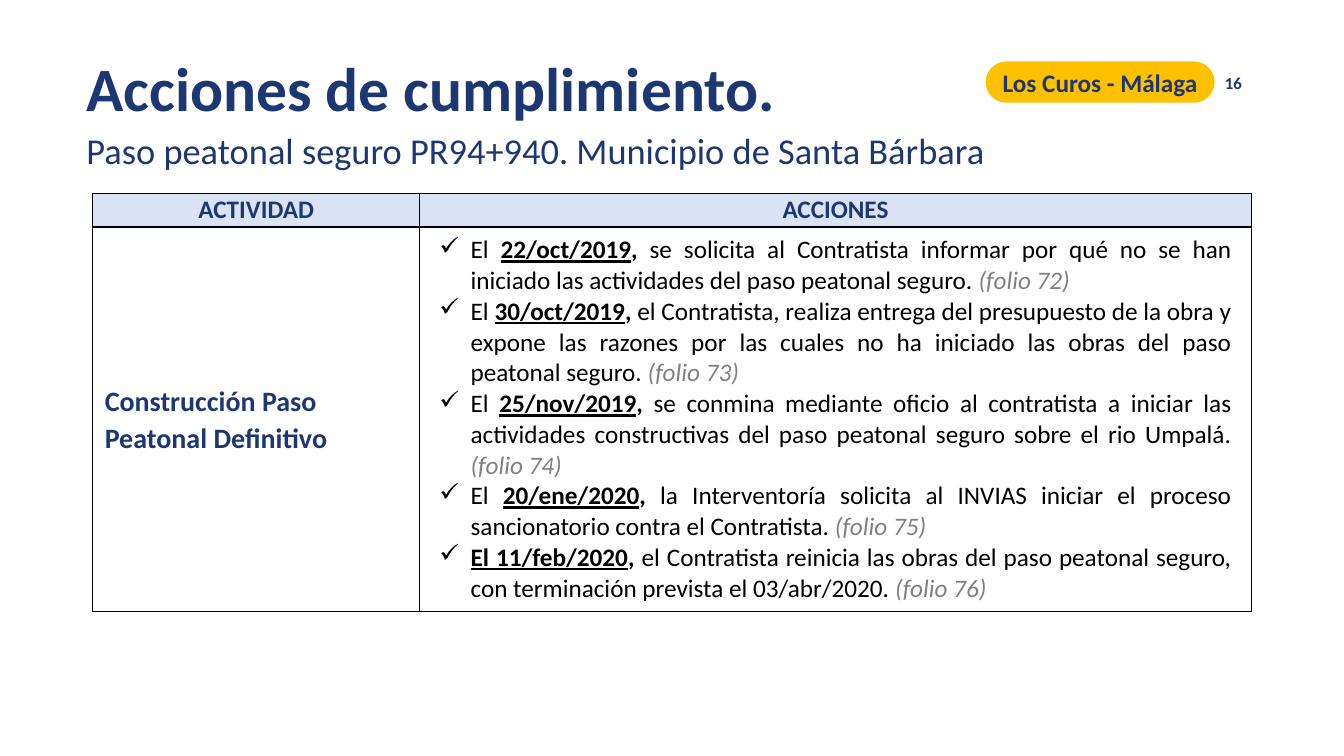
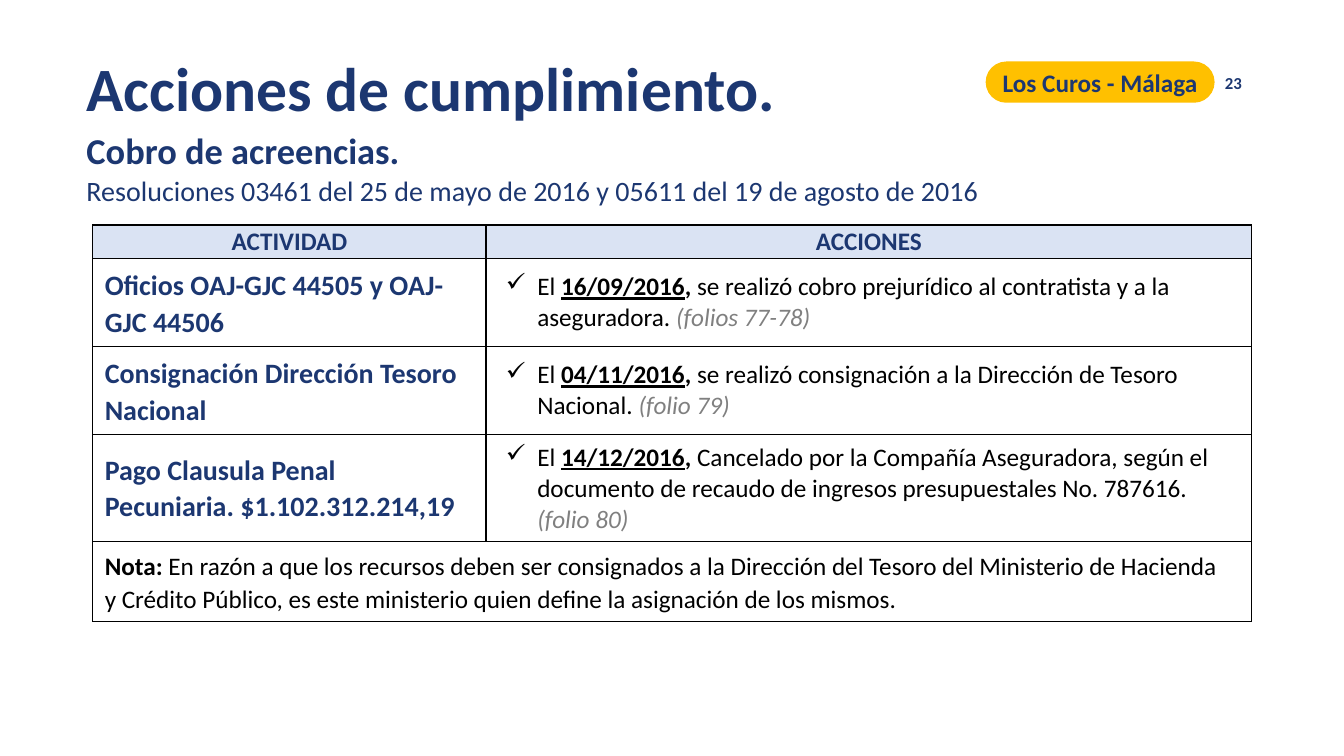
from lxml.etree import SubElement
from pptx import Presentation
from pptx.dml.color import RGBColor
from pptx.enum.shapes import MSO_SHAPE
from pptx.enum.text import MSO_ANCHOR, MSO_AUTO_SIZE, PP_ALIGN
from pptx.oxml.ns import qn
from pptx.util import Cm, Pt

FONT = "Calibri"
NAVY, AMBER, PALE, BLACK, GREY = "1C3771", "FFC000", "DAE3F3", "000000", "808080"
TITLE = "Acciones de cumplimiento."
ROUTE = "Los Curos - Málaga"
HEADERS = ("ACTIVIDAD", "ACCIONES")
TEXT_LEFT, TABLE_LEFT = 1.93, 2.34
TABLE_WIDTH, HEADER_HEIGHT = 29.2, 0.84
LOOSE = 1.07
NO_INSETS = (0, 0, 0, 0)
ACTIVITY_INSETS = (0.3, 0.2, 0.5, 0.2)
ACTION_INSETS = (0.5, 0.2, 0.5, 0.2)

WALKWAY_ROWS = [
    (9.7, "Construcción Paso Peatonal Definitivo", [
        ("El ", "22/oct/2019", " se solicita al Contratista informar por qué no se han iniciado "
         "las actividades del paso peatonal seguro. ", "(folio 72)"),
        ("El ", "30/oct/2019", " el Contratista, realiza entrega del presupuesto de la obra y "
         "expone las razones por las cuales no ha iniciado las obras del paso peatonal seguro. ",
         "(folio 73)"),
        ("El ", "25/nov/2019", " se conmina mediante oficio al contratista a iniciar las "
         "actividades constructivas del paso peatonal seguro sobre el rio Umpalá. ",
         "(folio 74)"),
        ("El ", "20/ene/2020", " la Interventoría solicita al INVIAS iniciar el proceso "
         "sancionatorio contra el Contratista. ", "(folio 75)"),
        ("", "El 11/feb/2020", " el Contratista reinicia las obras del paso peatonal seguro, "
         "con terminación prevista el 03/abr/2020. ", "(folio 76)"),
    ]),
]

COLLECTION_ROWS = [
    (2.22, "Oficios OAJ-GJC 44505 y OAJ-GJC 44506", [
        ("El ", "16/09/2016", " se realizó cobro prejurídico al contratista y a la "
         "aseguradora. ", "(folios 77-78)"),
    ]),
    (2.22, "Consignación Dirección Tesoro Nacional", [
        ("El ", "04/11/2016", " se realizó consignación a la Dirección de Tesoro Nacional. ",
         "(folio 79)"),
    ]),
    (2.68, "Pago Clausula Penal Pecuniaria. $1.102.312.214,19", [
        ("El ", "14/12/2016", " Cancelado por la Compañía Aseguradora, según el documento de "
         "recaudo de ingresos presupuestales No. 787616. ", "(folio 80)"),
    ]),
]

NOTE_HEIGHT = 2.03
NOTE = (" En razón a que los recursos deben ser consignados a la Dirección del Tesoro del "
        "Ministerio de Hacienda y Crédito Público, es este ministerio quien define la "
        "asignación de los mismos.")


def colour(code):
    """Turn a hex string into a colour."""
    return RGBColor.from_string(code)


def add_span(para, text, size=18, color=NAVY, bold=False, italic=False, underline=False):
    """Append one formatted run to a paragraph."""
    span = para.add_run()
    span.text = text
    font = span.font
    font.name, font.size, font.color.rgb = FONT, Pt(size), colour(color)
    font.bold, font.italic, font.underline = bold, italic, underline


def next_para(frame, align=PP_ALIGN.LEFT, spacing=1.0):
    """Return the empty first paragraph of a frame, or a new one."""
    para = frame.add_paragraph() if frame.text else frame.paragraphs[0]
    para.alignment, para.line_spacing = align, spacing
    return para


def add_line(frame, text, align=PP_ALIGN.LEFT, spacing=1.0, **style):
    """Write a paragraph with a single format."""
    add_span(next_para(frame, align, spacing), text, **style)


def add_action(frame, action, align):
    """Write a ticked paragraph with its date and folio."""
    lead, date, detail, folio = action
    para = next_para(frame, align)
    properties = para._p.get_or_add_pPr()
    properties.set("marL", str(Cm(0.79)))
    properties.set("indent", str(-Cm(0.79)))
    SubElement(properties, qn("a:buChar"), char="✓")
    if lead:
        add_span(para, lead, color=BLACK)
    add_span(para, date, color=BLACK, bold=True, underline=True)
    add_span(para, ",", color=BLACK, bold=True)
    add_span(para, detail, color=BLACK)
    add_span(para, folio, color=GREY, italic=True)


def place(shape, left, top, width, height):
    """Position a shape, in centimetres."""
    shape.left, shape.top = Cm(left), Cm(top)
    shape.width, shape.height = Cm(width), Cm(height)


def add_box(page, left, top, width, height, anchor=MSO_ANCHOR.TOP):
    """Add a wrapping text box and return its frame."""
    box = page.shapes.add_textbox(Cm(left), Cm(top), Cm(width), Cm(height))
    frame = box.text_frame
    frame.word_wrap, frame.vertical_anchor = True, anchor
    return frame


def add_route_pill(page):
    """Add the rounded label with the name of the road."""
    pill = page.shapes.add_shape(
        MSO_SHAPE.ROUNDED_RECTANGLE, Cm(24.84), Cm(1.55), Cm(5.77), Cm(1.04))
    pill.adjustments[0] = 0.5
    pill.shadow.inherit = False
    pill.fill.solid()
    pill.fill.fore_color.rgb = colour(AMBER)
    pill.line.fill.background()
    frame = pill.text_frame
    frame.word_wrap, frame.vertical_anchor = False, MSO_ANCHOR.MIDDLE
    add_line(frame, ROUTE, align=PP_ALIGN.CENTER, bold=True)


def add_page(deck, number):
    """Add a slide with the shared title, road label and page number."""
    page = deck.slides.add_slide(deck.slide_layouts[5])
    title = page.shapes.title
    place(title, TEXT_LEFT, 0.99, 22.8, 2.28)
    frame = title.text_frame
    frame.word_wrap, frame.vertical_anchor = True, MSO_ANCHOR.TOP
    frame.auto_size = MSO_AUTO_SIZE.NONE
    add_line(frame, TITLE, spacing=LOOSE, size=44, bold=True)
    add_route_pill(page)
    frame = add_box(page, 30.61, 1.57, 0.94, 1.02, MSO_ANCHOR.MIDDLE)
    frame.margin_left = 0
    add_line(frame, number, align=PP_ALIGN.RIGHT, size=12, bold=True)
    return page


def format_cell(cell, insets, fill=None):
    """Set borders, insets and fill of a cell and return its frame."""
    properties = cell._tc.get_or_add_tcPr()
    for side in ("lnL", "lnR", "lnT", "lnB"):
        line = SubElement(properties, qn(f"a:{side}"), w=str(Pt(1)))
        SubElement(SubElement(line, qn("a:solidFill")), qn("a:srgbClr"), val=BLACK)
    if fill:
        cell.fill.solid()
        cell.fill.fore_color.rgb = colour(fill)
    else:
        cell.fill.background()
    cell.margin_left, cell.margin_top, cell.margin_right, cell.margin_bottom = map(Cm, insets)
    cell.vertical_anchor = MSO_ANCHOR.MIDDLE
    return cell.text_frame


def add_actions_table(page, top, activity_width, rows, align=PP_ALIGN.LEFT, note=None):
    """Add the table of activities and actions, with an optional note below."""
    heights = [HEADER_HEIGHT] + [height for height, _, _ in rows]
    if note:
        heights.append(NOTE_HEIGHT)
    table = page.shapes.add_table(
        len(heights), 2, Cm(TABLE_LEFT), Cm(top), Cm(TABLE_WIDTH), Cm(sum(heights))).table
    table.horz_banding = False
    for column, width in zip(table.columns, (activity_width, TABLE_WIDTH - activity_width)):
        column.width = Cm(width)
    for row, height in zip(table.rows, heights):
        row.height = Cm(height)
    for index, header in enumerate(HEADERS):
        frame = format_cell(table.cell(0, index), NO_INSETS, PALE)
        add_line(frame, header, align=PP_ALIGN.CENTER, bold=True)
    for index, (_, activity, actions) in enumerate(rows, start=1):
        frame = format_cell(table.cell(index, 0), ACTIVITY_INSETS)
        add_line(frame, activity, spacing=LOOSE, size=20, bold=True)
        frame = format_cell(table.cell(index, 1), ACTION_INSETS)
        for action in actions:
            add_action(frame, action, align)
    if note:
        last = len(heights) - 1
        table.cell(last, 0).merge(table.cell(last, 1))
        format_cell(table.cell(last, 1), ACTIVITY_INSETS)
        para = next_para(format_cell(table.cell(last, 0), ACTIVITY_INSETS), spacing=LOOSE)
        add_span(para, "Nota:", color=BLACK, bold=True)
        add_span(para, note, color=BLACK)


def add_walkway_page(deck):
    """Build the slide about the pedestrian crossing."""
    page = add_page(deck, "16")
    frame = add_box(page, TEXT_LEFT, 3.02, 29.6, 1.45)
    add_line(frame, "Paso peatonal seguro PR94+940. Municipio de Santa Bárbara",
             spacing=LOOSE, size=26)
    add_actions_table(page, 4.88, 8.23, WALKWAY_ROWS, align=PP_ALIGN.JUSTIFY)


def add_collection_page(deck):
    """Build the slide about the collection of debts."""
    page = add_page(deck, "23")
    frame = add_box(page, TEXT_LEFT, 3.02, 29.6, 2.4)
    add_line(frame, "Cobro de acreencias.", spacing=LOOSE, size=26, bold=True)
    add_line(frame, "Resoluciones 03461 del 25 de mayo de 2016 y 05611 del 19 de agosto de 2016",
             spacing=LOOSE, size=20)
    add_actions_table(page, 5.67, 9.91, COLLECTION_ROWS, note=NOTE)


def main():
    """Build and save the deck."""
    deck = Presentation()
    deck.slide_width, deck.slide_height = Cm(33.87), Cm(19.05)
    add_walkway_page(deck)
    add_collection_page(deck)
    deck.save("out.pptx")


if __name__ == "__main__":
    main()
